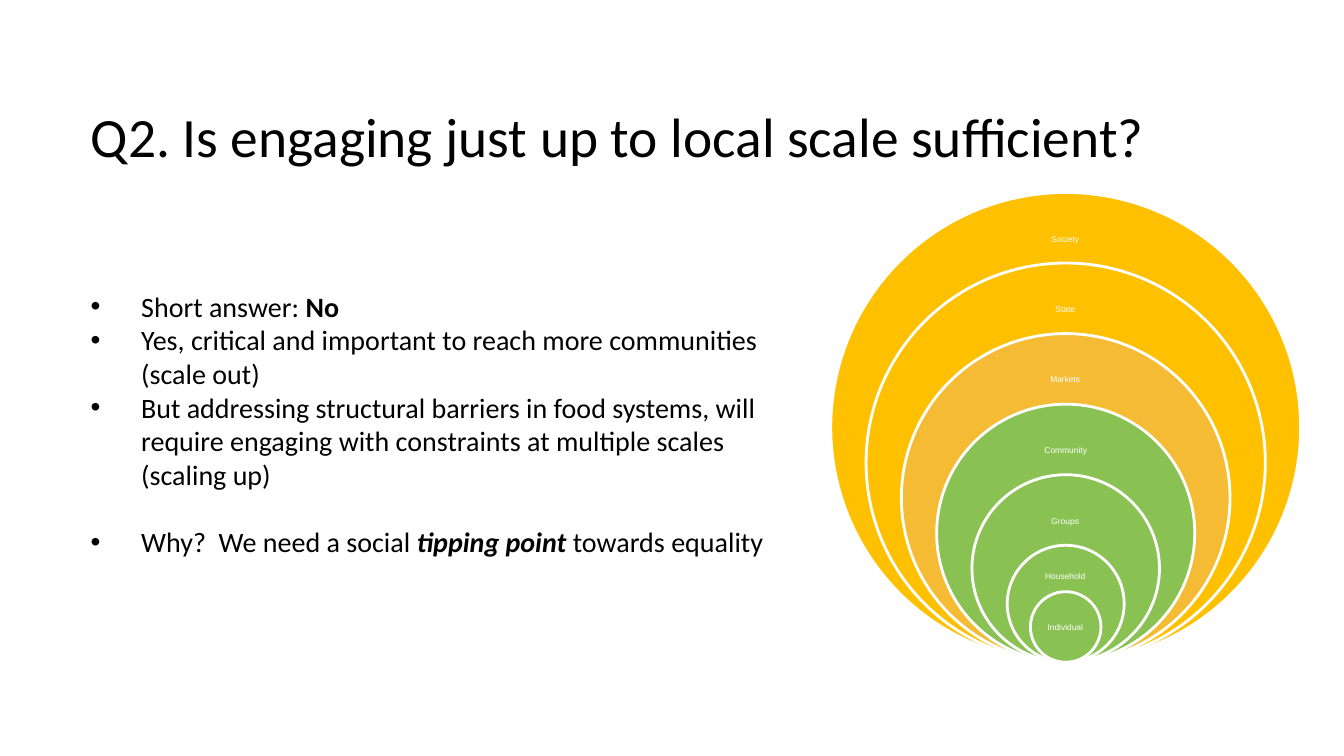
import dataclasses
import typing

import pptx
import pptx.dml.color
import pptx.enum.shapes
import pptx.enum.text
import pptx.util

SCALE = 9144  # EMU in one px, 100 px to the inch
BLACK = pptx.dml.color.RGBColor(0x00, 0x00, 0x00)
WHITE = pptx.dml.color.RGBColor(0xFF, 0xFF, 0xFF)
GOLD = pptx.dml.color.RGBColor(0xFF, 0xC0, 0x00)
AMBER = pptx.dml.color.RGBColor(0xF5, 0xBB, 0x34)
GREEN = pptx.dml.color.RGBColor(0x8A, 0xC1, 0x53)

ANCHOR = pptx.enum.text.MSO_ANCHOR
ALIGN = pptx.enum.text.PP_ALIGN
FIT = pptx.enum.text.MSO_AUTO_SIZE

MID_X = 1057  # shared centre line of the rings
BASE = 657  # shared lowest point of the rings


def px(num: int) -> pptx.util.Emu:
    return pptx.util.Emu(num * SCALE)


@dataclasses.dataclass
class Ring:
    name: str
    size: int
    fill: pptx.dml.color.RGBColor
    drop: int  # from ring top to label top
    wide: int
    high: int


@dataclasses.dataclass
class Run:
    text: str
    form: dict[str, bool] = dataclasses.field(default_factory=dict)


RINGS = [
    Ring("Society", 466, GOLD, 23, 175, 47),
    Ring("State", 396, GOLD, 23, 171, 46),
    Ring("Markets", 326, AMBER, 23, 169, 45),
    Ring("Community", 256, GREEN, 23, 138, 46),
    Ring("Groups", 186, GREEN, 23, 121, 47),
    Ring("Household", 116, GREEN, 17, 79, 28),
    Ring("Individual", 70, GREEN, 18, 49, 35),
]

POINTS = [
    [Run("Short answer: "), Run("No", {"bold": True})],
    [Run("Yes, critical and important to reach more communities (scale out)")],
    [Run("But addressing structural barriers in food systems, will require "
         "engaging with constraints at multiple scales (scaling up)")],
    [Run("Why?  We need a social "),
     Run("tipping point ", {"bold": True, "italic": True}),
     Run("towards equality")],
]


def apply(item: typing.Any, form: dict[str, typing.Any]) -> None:
    for key, val in form.items():
        setattr(item, key, val)


def place(shape: typing.Any, left: int, top: int, wide: int, high: int) -> None:
    apply(shape, {"left": px(left), "top": px(top),
                  "width": px(wide), "height": px(high)})


def style(run: typing.Any, face: str, size: float,
          tint: pptx.dml.color.RGBColor, **more: bool) -> None:
    apply(run.font, {"name": face, "size": pptx.util.Pt(size), **more})
    run.font.color.rgb = tint


def add_title(slide: typing.Any) -> None:
    title = slide.shapes.title
    place(title, 80, 126, 1150, 145)
    # The deep lower margin lifts the line to the top of the box
    apply(title.text_frame, {
        "word_wrap": True, "auto_size": FIT.NONE,
        "vertical_anchor": ANCHOR.MIDDLE, "margin_left": px(10),
        "margin_right": px(10), "margin_top": px(5), "margin_bottom": px(126)})
    para = title.text_frame.paragraphs[0]
    apply(para, {"alignment": ALIGN.LEFT, "line_spacing": 0.9})
    run = para.add_run()
    run.text = "Q2. Is engaging just up to local scale sufficient?"
    style(run, "Calibri", 39.6, BLACK)


def add_list(slide: typing.Any) -> None:
    body = slide.placeholders[1]
    place(body, 80, 282, 693, 279)
    frame = body.text_frame
    apply(frame, {"word_wrap": True, "auto_size": FIT.SHAPE_TO_FIT_TEXT,
                  "vertical_anchor": ANCHOR.TOP})
    for num, runs in enumerate(POINTS):
        para = frame.add_paragraph() if num else frame.paragraphs[0]
        last = num == len(POINTS) - 1
        apply(para, {"alignment": ALIGN.LEFT, "line_spacing": 1.0,
                     "space_before": pptx.util.Pt(24 if last else 0)})
        props = para._p.get_or_add_pPr()
        props.set("marL", str(px(50)))
        props.set("indent", str(px(-50)))
        for part in runs:
            run = para.add_run()
            run.text = part.text
            style(run, "Calibri", 20, BLACK, **part.form)


def add_ring(group: typing.Any, ring: Ring) -> None:
    top = BASE - ring.size
    disc = group.shapes.add_shape(
        pptx.enum.shapes.MSO_SHAPE.OVAL, px(MID_X - ring.size // 2), px(top),
        px(ring.size), px(ring.size))
    disc.shadow.inherit = False
    disc.fill.solid()
    disc.fill.fore_color.rgb = ring.fill
    disc.line.color.rgb = WHITE
    disc.line.width = pptx.util.Pt(2)

    label = group.shapes.add_textbox(
        px(MID_X - (ring.wide + 1) // 2), px(top + ring.drop),
        px(ring.wide), px(ring.high))
    frame = label.text_frame
    apply(frame, {"word_wrap": True, "vertical_anchor": ANCHOR.MIDDLE})
    apply(frame, {f"margin_{side}": px(5)
                  for side in ("left", "right", "top", "bottom")})
    para = frame.paragraphs[0]
    apply(para, {"alignment": ALIGN.CENTER, "line_spacing": 0.9})
    run = para.add_run()
    run.text = ring.name
    style(run, "Arial", 6, WHITE)


def main() -> None:
    deck = pptx.Presentation()
    apply(deck, {"slide_width": px(1333), "slide_height": px(750)})
    slide = deck.slides.add_slide(deck.slide_layouts[1])

    # Title and answer list
    add_title(slide)
    add_list(slide)

    # Nested scales, widest first
    group = slide.shapes.add_group_shape()
    for ring in RINGS:
        add_ring(group, ring)

    deck.save("out.pptx")


if __name__ == "__main__":
    main()
